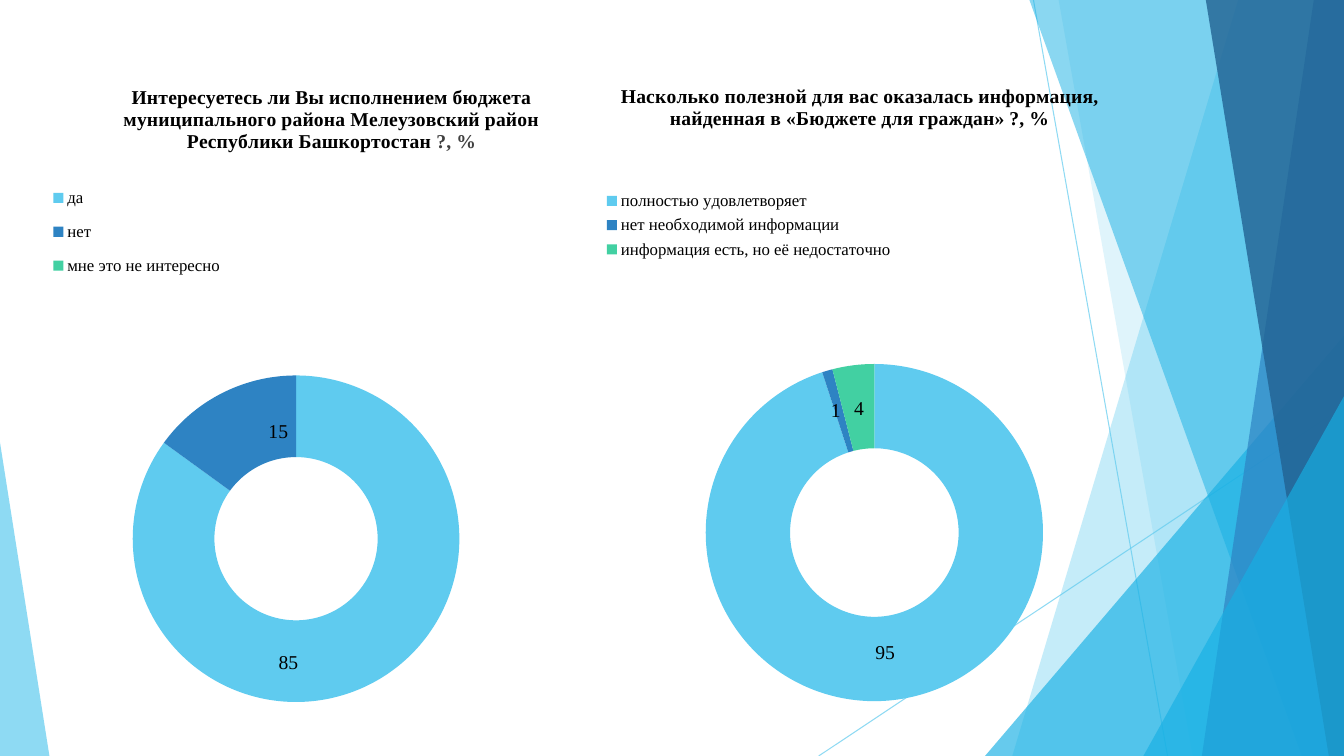
from lxml import etree
from pptx import Presentation
from pptx.chart.data import CategoryChartData
from pptx.dml.color import RGBColor
from pptx.enum.chart import XL_CHART_TYPE, XL_LEGEND_POSITION
from pptx.enum.shapes import MSO_CONNECTOR, MSO_SHAPE
from pptx.enum.text import MSO_ANCHOR, PP_ALIGN
from pptx.oxml import parse_xml
from pptx.oxml.ns import nsdecls, qn
from pptx.util import Pt

SCALE = 9144
WIDE, HIGH = 1333, 750
SERIF = "Times New Roman"
SKY, BLUE, GREEN = "5FCBEF", "2E83C3", "42D0A2"
CYAN, NAVY = "17B0E4", "226292"
BLACK, GREY = "000000", "404040"


def px(*sizes):
    return [size * SCALE for size in sizes]


def paint(target, tone, clear=None):
    target.solid()
    target.fore_color.rgb = RGBColor.from_string(tone)
    if clear is not None:
        for node in target._xPr.iter(qn("a:srgbClr")):
            etree.SubElement(node, qn("a:alpha")).set("val", str(clear * 1000))


def style(font, size, tone, bold=False, face=SERIF):
    font.size = Pt(size)
    font.bold = bold
    font.name = face
    paint(font.fill, tone)


def add_line(slide, start, end):
    line = slide.shapes.add_connector(MSO_CONNECTOR.STRAIGHT, *px(*start, *end))
    line.line.width = Pt(0.75)
    paint(line.line.fill, SKY, 70)
    etree.SubElement(line._element.spPr, qn("a:effectLst"))


def finish(shape, tone, clear):
    shape.shadow.inherit = False
    paint(shape.fill, tone, clear)
    shape.line.fill.background()


def add_band(slide, box, top, foot, tone, clear):
    x, y, w, h = box
    pen = slide.shapes.build_freeform(x + top, y, scale=SCALE)
    pen.add_line_segments([(x + w, y), (x + w, y + h), (x + foot, y + h)])
    finish(pen.convert_to_shape(), tone, clear)


def add_wedge(slide, box, tip, tone, clear):
    wedge = slide.shapes.add_shape(MSO_SHAPE.ISOSCELES_TRIANGLE, *px(*box))
    wedge.adjustments[0] = tip
    finish(wedge, tone, clear)


def draw_decor(slide, box):
    x, y, w, h = box
    right, foot = x + w, y + h
    add_line(slide, (right - 308, y), (right - 175, foot))
    add_line(slide, (right, y + 403), (right - 521, foot))
    bands = [
        (329, 224, 0, SKY, 36),
        (283, 0, 133, SKY, 20),
        (356, 417, 1, CYAN, 66),
        (312, 0, 270, CYAN, 50),
        (141, 111, 0, BLUE, 70),
        (137, 0, 122, NAVY, 80),
        (199, 357, 1, CYAN, 66),
    ]
    for wide, top, low, tone, clear in bands:
        if tone == CYAN and clear == 66:
            place = (right - wide, foot - top, wide, top)
            add_wedge(slide, place, low, tone, clear)
        else:
            place = (right - wide, y, wide, h)
            add_band(slide, place, top, low, tone, clear)
    add_wedge(slide, (x, foot - 311, 49, 311), 0, SKY, 70)


def set_layout(part, spot, index, inner=False):
    for old in part.findall(qn("c:layout")):
        part.remove(old)
    target = '<c:layoutTarget val="inner"/>' if inner else ""
    modes = "".join(f'<c:{key}Mode val="edge"/>' for key in "xy")
    sizes = "".join(f'<c:{key} val="{size}"/>' for key, size in zip("xywh", spot))
    part.insert(index, parse_xml(
        f'<c:layout {nsdecls("c")}><c:manualLayout>{target}{modes}{sizes}'
        "</c:manualLayout></c:layout>"))


def add_label(slide, box, text):
    label = slide.shapes.add_textbox(*px(*box))
    frame = label.text_frame
    frame.word_wrap = True
    frame.vertical_anchor = MSO_ANCHOR.MIDDLE
    frame.margin_top = frame.margin_bottom = 0
    para = frame.paragraphs[0]
    para.alignment = PP_ALIGN.CENTER
    run = para.add_run()
    run.text = text
    style(run.font, 14, BLACK)


def draw_panel(slide, box, title, names, values, spots):
    data = CategoryChartData()
    data.categories = names
    data.add_series("Series 1", values)
    frame = slide.shapes.add_chart(XL_CHART_TYPE.DOUGHNUT, *px(*box), data)
    chart = frame.chart
    style(chart.font, 18, BLACK, face="Cabin")
    root = chart._chartSpace.find(qn("c:chart"))
    root.addnext(parse_xml(
        f'<c:spPr {nsdecls("c", "a")}><a:noFill/><a:ln><a:noFill/></a:ln></c:spPr>'))

    chart.has_title = True
    para = chart.chart_title.text_frame.paragraphs[0]
    para.alignment = PP_ALIGN.CENTER
    for text, tone in title:
        run = para.add_run()
        run.text = text
        style(run.font, 14, tone, True)

    chart.has_legend = True
    key = chart.legend
    key.position = XL_LEGEND_POSITION.RIGHT
    key.include_in_layout = False
    style(key.font, 12, BLACK)

    plot = chart.plots[0]
    plot.vary_by_categories = True
    plot.has_data_labels = False
    for index, tone in enumerate((SKY, BLUE, GREEN)):
        form = plot.series[0].points[index].format
        paint(form.fill, tone)
        form.line.fill.background()

    set_layout(chart.chart_title._element, spots["title"], 1)
    set_layout(key._element, spots["key"], 1)
    set_layout(root.find(qn("c:plotArea")), spots["plot"], 0, True)


def draw_labels(slide, box, labels):
    for text, left, top in labels:
        add_label(slide, (box[0] + left, box[1] + top, 48, 25), text)


def main():
    deck = Presentation()
    deck.slide_width, deck.slide_height = px(WIDE, HIGH)
    slide = deck.slides.add_slide(deck.slide_layouts[6])
    draw_decor(slide, (0, 0, WIDE, HIGH))

    left = (23, 68, 536, 648)
    right = (550, 66, 622, 656)
    draw_panel(
        slide, left,
        [("Интересуетесь ли Вы исполнением бюджета муниципального района "
          "Мелеузовский район Республики Башкортостан ", BLACK), ("?, %", GREY)],
        ["да", "нет", "мне это не интересно"], [85, 15, 0],
        {"title": (0.18, 0.02), "key": (0.03, 0.16, 0.36, 0.18),
         "plot": (0.2, 0.47, 0.61, 0.5)})
    draw_panel(
        slide, right,
        [("Насколько полезной для вас оказалась информация, "
          "найденная в «Бюджете для граждан» ?, %", BLACK)],
        ["полностью удовлетворяет", "нет необходимой информации",
         "информация есть, но её недостаточно"], [95, 1, 4],
        {"title": (0.1, 0.02), "key": (0.06, 0.18, 0.5, 0.12),
         "plot": (0.24, 0.45, 0.54, 0.51)})
    draw_labels(slide, left, [("15", 229, 347), ("85", 239, 576)])
    draw_labels(slide, right, [("95", 304, 568), ("4", 278, 326), ("1", 255, 328)])
    deck.save("out.pptx")


if __name__ == "__main__":
    main()
